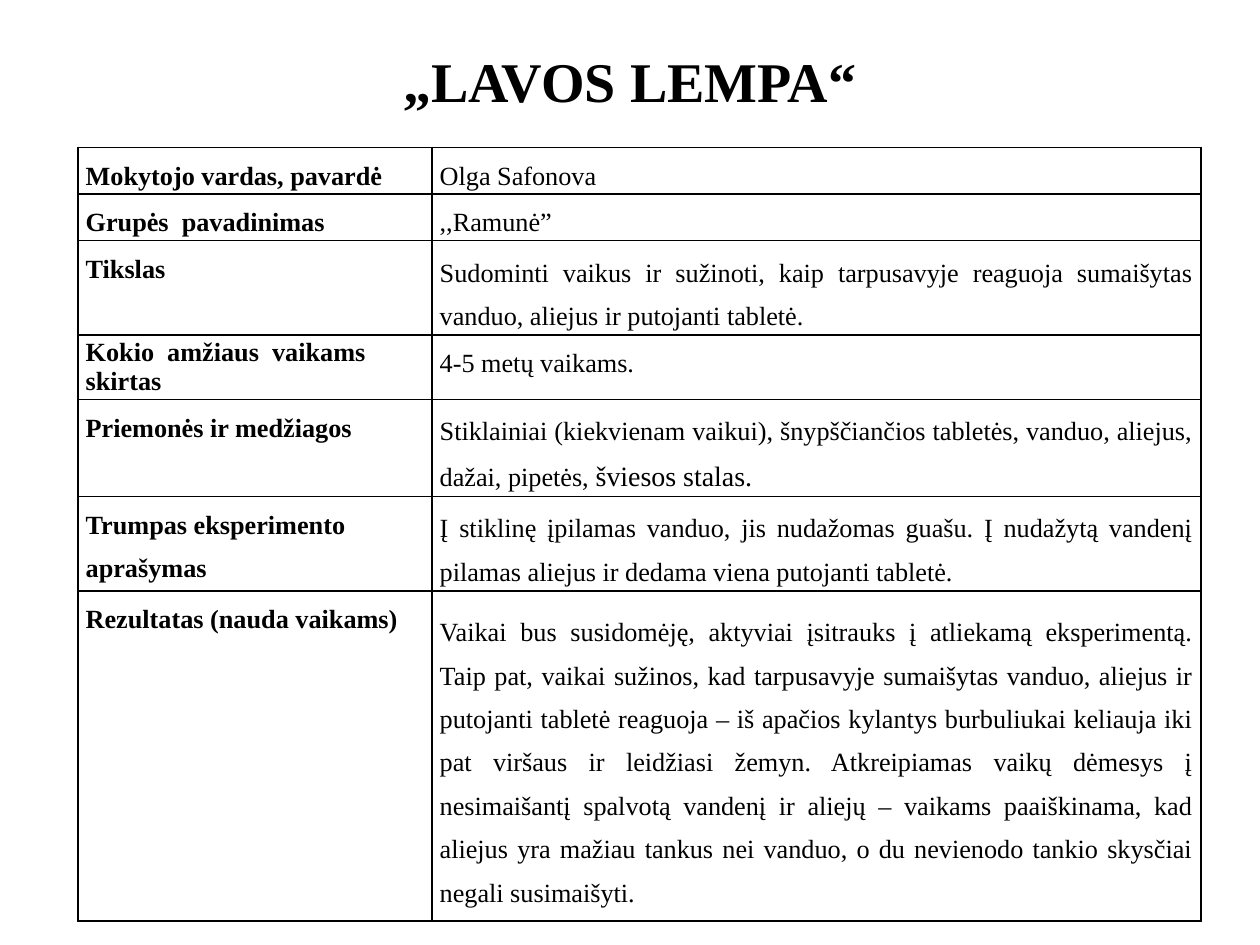
from lxml.etree import SubElement
from pptx import Presentation
from pptx.dml.color import RGBColor
from pptx.enum.text import MSO_ANCHOR as Anchor, PP_ALIGN as Align
from pptx.oxml.ns import qn
from pptx.util import Inches, Pt

COLORS = {"ink": "000000"}
FONT = "Times New Roman"
TITLE = "„LAVOS LEMPA“"

TOP, MIDDLE = Anchor.TOP, Anchor.MIDDLE
BODY = {"alignment": Align.JUSTIFY, "line_spacing": 1.5}
LEFT = {"alignment": Align.LEFT, "line_spacing": 1.5}
SINGLE = {"alignment": Align.LEFT, "line_spacing": 1.0}

# Row height, then label and answer: runs of (text, size), anchor, paragraph format
ROWS = [
    (0.37, ([("Mokytojo vardas, pavardė", 15)], TOP, BODY),
     ([("Olga Safonova", 15)], TOP, BODY)),
    (0.37, ([("Grupės  pavadinimas", 15)], TOP, BODY),
     ([(",,Ramunė”", 15)], TOP, BODY)),
    (0.75, ([("Tikslas", 15)], TOP, BODY),
     ([("Sudominti vaikus ir sužinoti, kaip tarpusavyje reaguoja sumaišytas "
        "vanduo, aliejus ir putojanti tabletė.", 15)], MIDDLE, BODY)),
    (0.51, ([("Kokio  amžiaus  vaikams skirtas", 15)], MIDDLE, SINGLE),
     ([("4-5 metų vaikams.", 15)], TOP, BODY)),
    (0.77, ([("Priemonės ir medžiagos", 15)], TOP, BODY),
     ([("Stiklainiai (kiekvienam vaikui), šnypščiančios tabletės, vanduo, "
        "aliejus, dažai, pipetės, ", 15), ("šviesos stalas.", 16)], MIDDLE, BODY)),
    (0.75, ([("Trumpas eksperimento aprašymas", 15)], TOP, LEFT),
     ([("Į stiklinę įpilamas vanduo, jis nudažomas guašu. Į nudažytą vandenį "
        "pilamas aliejus ir dedama viena putojanti tabletė.", 15)], MIDDLE, BODY)),
    (2.62, ([("Rezultatas (nauda vaikams)", 15)], TOP, BODY),
     ([("Vaikai bus susidomėję, aktyviai įsitrauks į atliekamą eksperimentą. "
        "Taip pat, vaikai sužinos, kad tarpusavyje sumaišytas vanduo, aliejus ir "
        "putojanti tabletė reaguoja – iš apačios kylantys burbuliukai keliauja iki "
        "pat viršaus ir leidžiasi žemyn. Atkreipiamas vaikų dėmesys į "
        "nesimaišantį spalvotą vandenį ir aliejų – vaikams paaiškinama, kad "
        "aliejus yra mažiau tankus nei vanduo, o du nevienodo tankio skysčiai "
        "negali susimaišyti.", 15)], MIDDLE, BODY)),
]
COLUMNS = [2.81, 6.1]
TABLE_LEFT, TABLE_TOP = 0.62, 1.17


def set_values(target, values):
    for name, value in values.items():
        setattr(target, name, value)


def add_run(paragraph, text, size, bold):
    run = paragraph.add_run()
    run.text = text
    set_values(run.font, {"name": FONT, "size": Pt(size), "bold": bold})
    run.font.color.rgb = RGBColor.from_string(COLORS["ink"])


def add_borders(cell):
    properties = cell._tc.get_or_add_tcPr()
    for index, side in enumerate(("lnL", "lnR", "lnT", "lnB")):
        line = SubElement(properties, qn(f"a:{side}"), w=str(Pt(1)))
        fill = SubElement(line, qn("a:solidFill"))
        SubElement(fill, qn("a:srgbClr"), val=COLORS["ink"])
        properties.insert(index, line)


def fill_cell(cell, content, bold):
    runs, anchor, layout = content
    set_values(cell, {"margin_left": Inches(0.06), "margin_right": Inches(0.06),
                      "margin_top": 0, "margin_bottom": 0,
                      "vertical_anchor": anchor})
    cell.fill.background()
    add_borders(cell)
    paragraph = cell.text_frame.paragraphs[0]
    set_values(paragraph, layout)
    for text, size in runs:
        add_run(paragraph, text, size, bold)


presentation = Presentation()
set_values(presentation, {"slide_width": Inches(10), "slide_height": Inches(7.5)})
slide = presentation.slides.add_slide(presentation.slide_layouts[6])

# Experiment table
table = slide.shapes.add_table(
    len(ROWS), len(COLUMNS), Inches(TABLE_LEFT), Inches(TABLE_TOP),
    Inches(sum(COLUMNS)), Inches(sum(row[0] for row in ROWS))).table
set_values(table, {"first_row": False, "horz_banding": False})
for column, width in zip(table.columns, COLUMNS):
    column.width = Inches(width)
for row, (height, label, answer) in zip(table.rows, ROWS):
    row.height = Inches(height)
    fill_cell(row.cells[0], label, True)
    fill_cell(row.cells[1], answer, False)

# Title
title = slide.shapes.add_textbox(0, Inches(0.16), Inches(10), Inches(0.96))
set_values(title.text_frame, {"word_wrap": True, "vertical_anchor": MIDDLE})
heading = title.text_frame.paragraphs[0]
heading.alignment = Align.CENTER
add_run(heading, TITLE, 32, True)

presentation.save("out.pptx")
